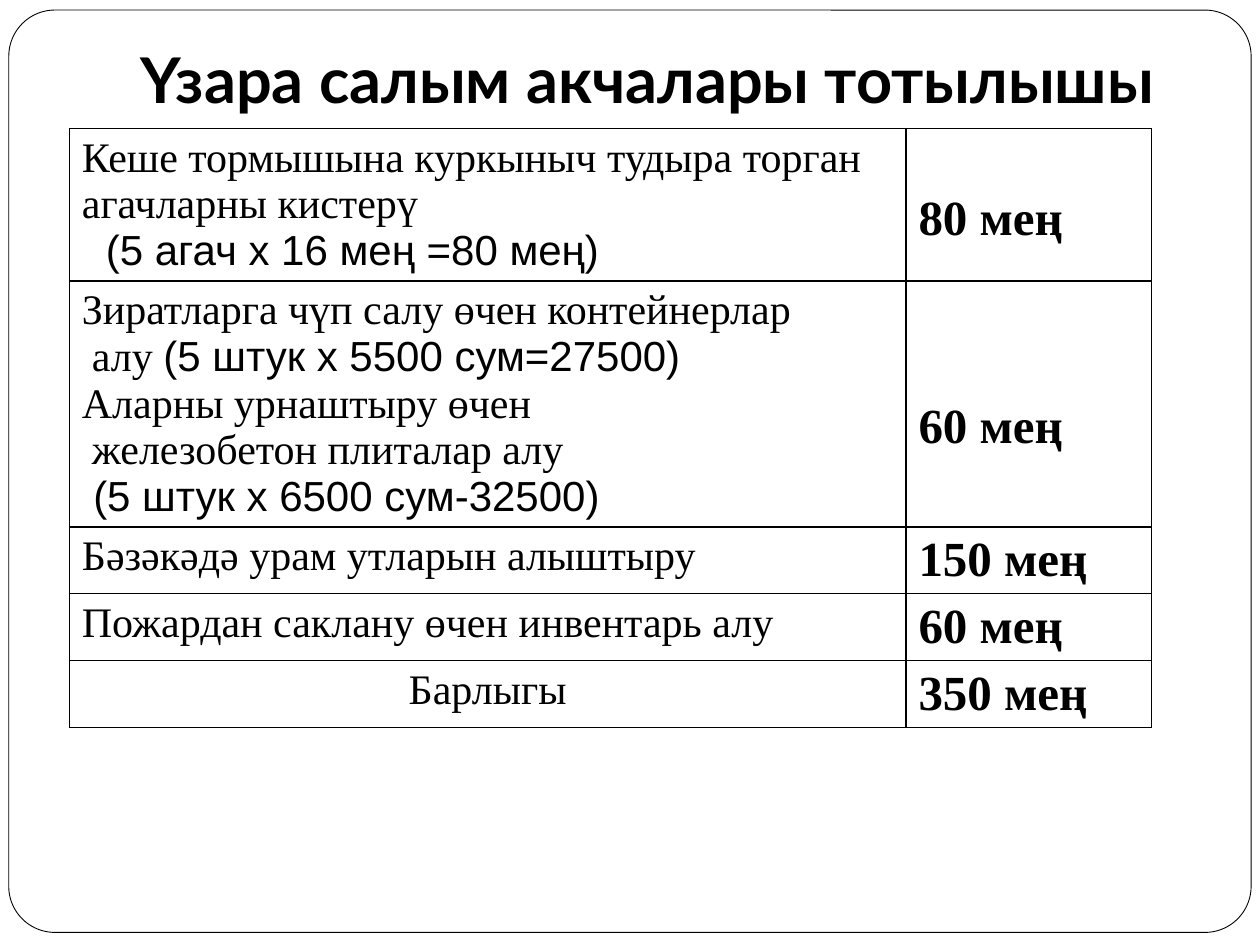
from lxml import etree
from pptx import Presentation
from pptx.dml.color import RGBColor
from pptx.enum.shapes import MSO_SHAPE
from pptx.enum.text import MSO_ANCHOR, MSO_AUTO_SIZE, PP_ALIGN
from pptx.oxml.ns import qn
from pptx.util import Inches, Pt

BLACK = RGBColor(0, 0, 0)
WHITE = RGBColor(255, 255, 255)
ROUND = MSO_SHAPE.ROUNDED_RECTANGLE
BOTTOM = MSO_ANCHOR.BOTTOM
FIXED = MSO_AUTO_SIZE.NONE
LEFT, CENTER = PP_ALIGN.LEFT, PP_ALIGN.CENTER
SERIF, SANS = "Times New Roman", "Arial"


def write(para, text, font=SERIF, size=24, bold=False, align=LEFT, indent=0):
    para.alignment = align
    if indent:
        para._p.get_or_add_pPr().set("marL", str(Inches(indent)))
    run = para.add_run()
    run.text = text
    run.font.name = font
    run.font.size = Pt(size)
    run.font.bold = bold
    run.font.color.rgb = BLACK


def border(cell):
    props = cell._tc.get_or_add_tcPr()
    for spot, side in enumerate(("lnL", "lnR", "lnT", "lnB")):
        line = etree.Element(qn("a:" + side), w=str(Pt(1)))
        fill = etree.SubElement(line, qn("a:solidFill"))
        etree.SubElement(fill, qn("a:srgbClr"), val=str(BLACK))
        props.insert(spot, line)


prs = Presentation()
prs.slide_width, prs.slide_height = Inches(10), Inches(7.5)
slide = prs.slides.add_slide(prs.slide_layouts[5])

frame = slide.shapes.add_shape(
    ROUND, Inches(0.07), Inches(0.08), Inches(9.86), Inches(7.32))
frame.adjustments[0] = 0.05
frame.shadow.inherit = False
frame.fill.solid()
frame.fill.fore_color.rgb = WHITE
frame.line.color.rgb = BLACK
frame.line.width = Pt(0.5)

title = slide.shapes.title
frame._element.addnext(title._element)
title.left, title.top = Inches(0.78), Inches(0.3)
title.width, title.height = Inches(8.72), Inches(0.72)
box = title.text_frame
box.auto_size = FIXED
box.word_wrap = True
box.vertical_anchor = BOTTOM
box.margin_bottom = Inches(0.1)
write(box.paragraphs[0], "Үзара салым акчалары тотылышы",
      font="Lato", size=36, bold=True, align=CENTER)

# Each row: height, top margin of the sum, sum, lines of (indent, runs)
rows = [
    (1.21, 0.5, "80 мең", [
        (0, [("Кеше тормышына куркыныч тудыра торган агачларны кистерү", SERIF)]),
        (0.19, [("(5 агач х 16 мең =80 мең)", SANS)])]),
    (1.95, 0.94, "60 мең", [
        (0, [("Зиратларга чүп салу өчен контейнерлар", SERIF)]),
        (0.08, [("алу ", SERIF), ("(5 штук х 5500 сум=27500)", SANS)]),
        (0, [("Аларны урнаштыру өчен", SERIF)]),
        (0.08, [("железобетон плиталар алу", SERIF)]),
        (0.09, [("(5 штук х 6500 сум-32500)", SANS)])]),
    (0.53, 0.05, "150 мең", [(0, [("Бәзәкәдә урам утларын алыштыру", SERIF)])]),
    (0.53, 0.05, "60 мең", [(0, [("Пожардан саклану өчен инвентарь алу", SERIF)])]),
    (0.53, 0.05, "350 мең", [(0, [("Барлыгы", SERIF)])]),
]

table = slide.shapes.add_table(
    len(rows), 2, Inches(0.55), Inches(1.02), Inches(8.59), Inches(4.75)).table
table.first_row = table.horz_banding = False
table.columns[0].width = Inches(6.64)
table.columns[1].width = Inches(1.95)

for num, (height, top, total, lines) in enumerate(rows):
    table.rows[num].height = Inches(height)
    item, cost = table.cell(num, 0), table.cell(num, 1)
    for cell in (item, cost):
        cell.fill.background()
        border(cell)
    align = CENTER if num == len(rows) - 1 else LEFT
    for spot, (indent, runs) in enumerate(lines):
        body = item.text_frame
        para = body.add_paragraph() if spot else body.paragraphs[0]
        for text, font in runs:
            write(para, text, font=font, align=align, indent=indent)
    cost.margin_top = Inches(top)
    write(cost.text_frame.paragraphs[0], total, size=28, bold=True)

prs.save("out.pptx")
